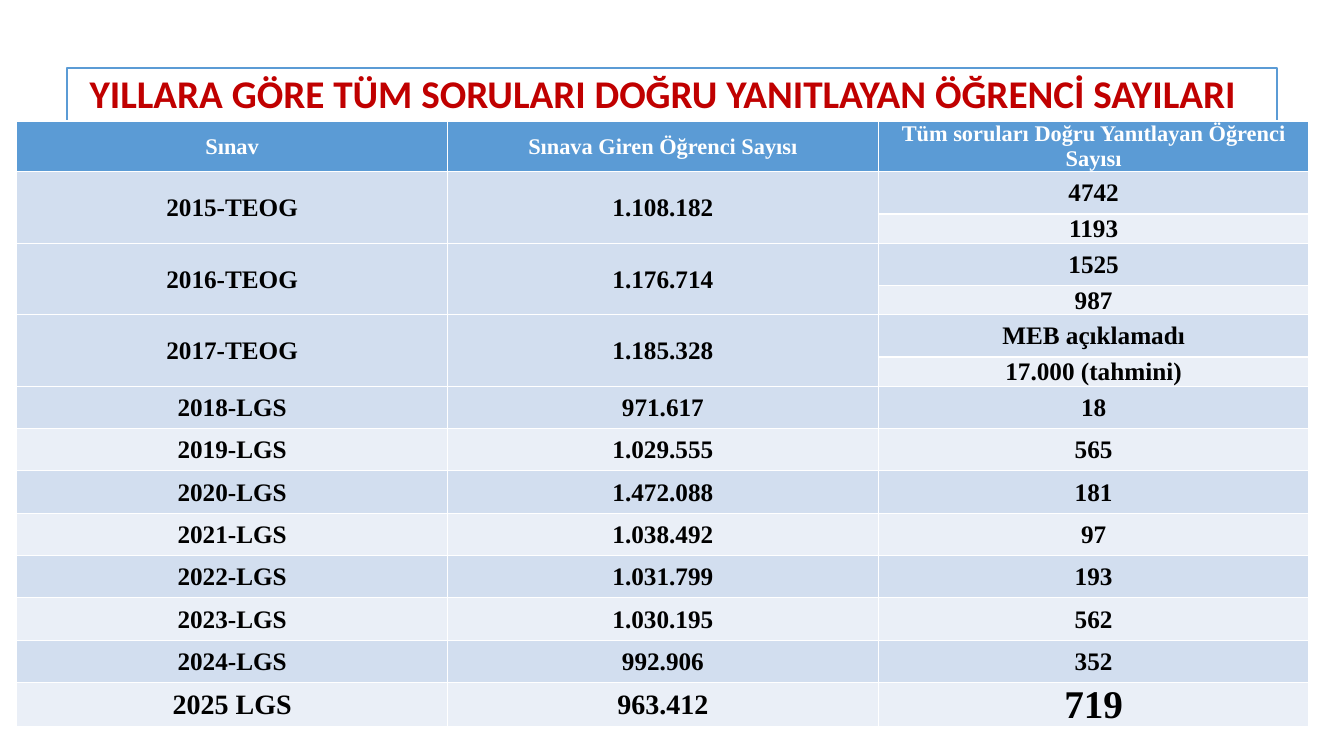
"""Build a slide tabling how many students answered every exam question correctly."""
from dataclasses import dataclass

import pptx
import pptx.dml.color
import pptx.enum.shapes
import pptx.enum.text
import pptx.util


@dataclass(frozen=True)
class Theme:
    """Colours, fonts and type sizes of the slide."""
    blue: str = "5B9BD5"
    red: str = "C00000"
    white: str = "FFFFFF"
    black: str = "000000"
    bands: tuple = ("EAEFF7", "D2DEEF")
    title_font: str = "Calibri"
    table_font: str = "Times New Roman"
    title_size: int = 28
    header_size: int = 16
    body_size: int = 18
    latest_size: int = 20
    highlight_size: int = 28


THEME = Theme()
WIDTH, HEIGHT = pptx.util.Inches(13.33), pptx.util.Inches(7.5)
TALL_ROW, SHORT_ROW = pptx.util.Inches(0.42), pptx.util.Inches(0.29)
TITLE = "YILLARA GÖRE TÜM SORULARI DOĞRU YANITLAYAN ÖĞRENCİ SAYILARI"
HEADERS = ("Sınav", "Sınava Giren Öğrenci Sayısı", "Tüm soruları Doğru Yanıtlayan Öğrenci Sayısı")
EXAMS = (
    ("2015-TEOG", "1.108.182", ("4742", "1193")),
    ("2016-TEOG", "1.176.714", ("1525", "987")),
    ("2017-TEOG", "1.185.328", ("MEB açıklamadı", "17.000 (tahmini)")),
    ("2018-LGS", "971.617", ("18",)),
    ("2019-LGS", "1.029.555", ("565",)),
    ("2020-LGS", "1.472.088", ("181",)),
    ("2021-LGS", "1.038.492", ("97",)),
    ("2022-LGS", "1.031.799", ("193",)),
    ("2023-LGS", "1.030.195", ("562",)),
    ("2024-LGS", "992.906", ("352",)),
    ("2025 LGS", "963.412", ("719",)),
)


def color(value):
    """Turn a hex string into a colour."""
    return pptx.dml.color.RGBColor.from_string(value)


def area(left, top, width, height):
    """Turn shares of the slide into a position and size."""
    return int(left * WIDTH), int(top * HEIGHT), int(width * WIDTH), int(height * HEIGHT)


def style_paragraph(para, font_name, size, ink):
    """Centre a paragraph and set its bold font."""
    para.alignment = pptx.enum.text.PP_ALIGN.CENTER
    para.font.name = font_name
    para.font.size = pptx.util.Pt(size)
    para.font.bold = True
    para.font.color.rgb = color(ink)


def add_frame(page):
    """Add the outlined frame around the content."""
    frame = page.shapes.add_shape(
        pptx.enum.shapes.MSO_SHAPE.RECTANGLE, *area(0.05, 0.09, 0.9, 0.823))
    frame.shadow.inherit = False
    frame.fill.background()
    frame.line.color.rgb = color(THEME.blue)
    frame.line.width = pptx.util.Pt(1.25)


def set_title(page):
    """Place and format the title."""
    title = page.shapes.title
    title.left, title.top, title.width, title.height = area(0.033, 0.121, 0.92, 0.065)
    box = title.text_frame
    box.text = TITLE
    box.word_wrap = True
    box.auto_size = pptx.enum.text.MSO_AUTO_SIZE.NONE
    box.vertical_anchor = pptx.enum.text.MSO_ANCHOR.BOTTOM
    box.margin_top = 0
    box.margin_bottom = pptx.util.Inches(0.23)
    para = box.paragraphs[0]
    para.line_spacing = 0.9
    style_paragraph(para, THEME.title_font, THEME.title_size, THEME.red)


def fill_cell(cell, text, size, ink, fill):
    """Write one table cell."""
    cell.text = text
    cell.vertical_anchor = pptx.enum.text.MSO_ANCHOR.MIDDLE
    cell.margin_left = cell.margin_right = cell.margin_top = pptx.util.Inches(0.01)
    cell.margin_bottom = 0
    cell.fill.solid()
    cell.fill.fore_color.rgb = color(fill)
    style_paragraph(cell.text_frame.paragraphs[0], THEME.table_font, size, ink)


def add_exam_table(page):
    """Add the exam table, merging exam cells that have several results."""
    row_count = 1 + sum(len(results) for _, _, results in EXAMS)
    table = page.shapes.add_table(
        row_count, len(HEADERS), *area(0.0125, 0.16, 0.9615, 0.788)).table
    for row in table.rows:
        row.height = TALL_ROW
    for column, header in enumerate(HEADERS):
        fill_cell(table.cell(0, column), header, THEME.header_size, THEME.white, THEME.blue)
    top = 1
    for exam, entrants, results in EXAMS:
        latest = exam == EXAMS[-1][0]
        size = THEME.latest_size if latest else THEME.body_size
        result_size = THEME.highlight_size if latest else size
        for offset, result in enumerate(results):
            row = top + offset
            if offset:
                table.rows[row].height = SHORT_ROW
            fill_cell(table.cell(row, 2), result, result_size, THEME.black, THEME.bands[row % 2])
        for column, text in enumerate((exam, entrants)):
            cell = table.cell(top, column)
            if len(results) > 1:
                cell.merge(table.cell(top + len(results) - 1, column))
            fill_cell(cell, text, size, THEME.black, THEME.bands[top % 2])
        top += len(results)


def main():
    """Build and save the deck."""
    deck = pptx.Presentation()
    deck.slide_width, deck.slide_height = WIDTH, HEIGHT
    page = deck.slides.add_slide(deck.slide_layouts.get_by_name("Title Only"))
    add_frame(page)
    set_title(page)
    add_exam_table(page)
    deck.save("out.pptx")


if __name__ == "__main__":
    main()
